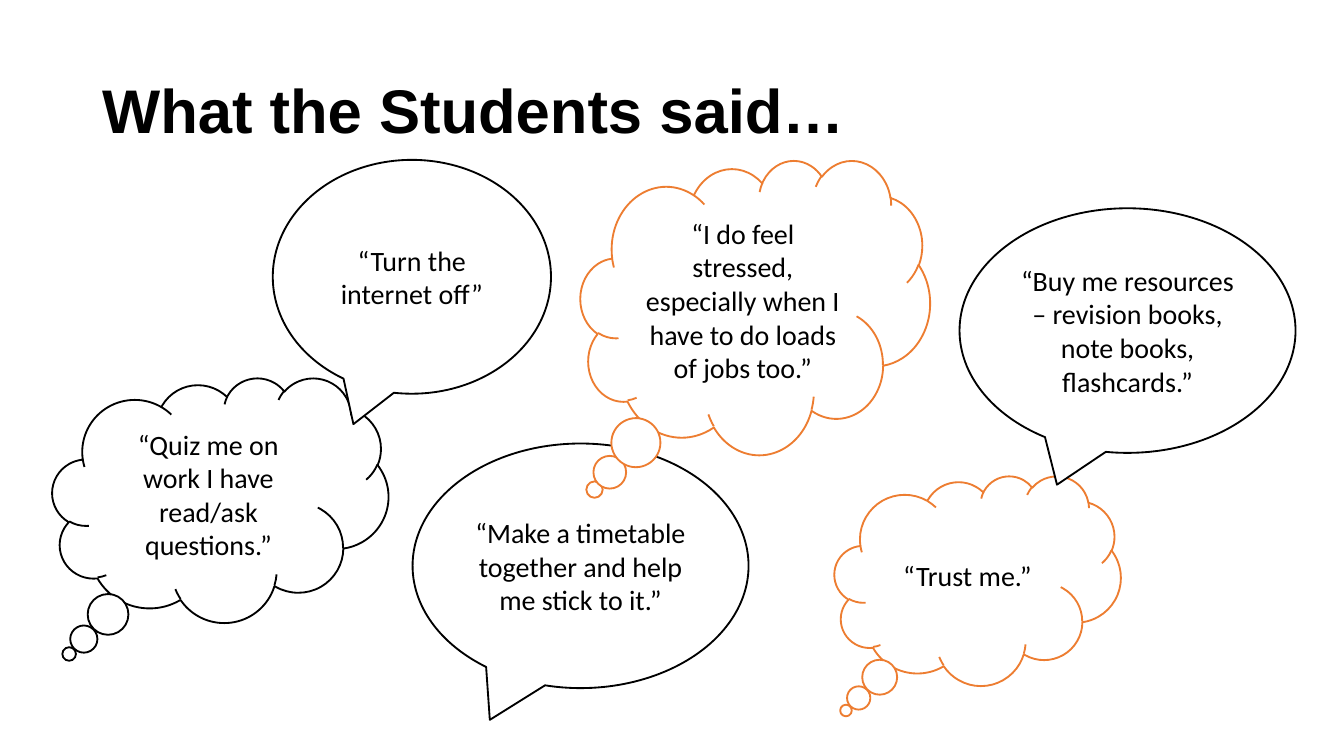
import pptx
import pptx.dml.color
import pptx.enum.shapes
import pptx.enum.text
import pptx.util
from pptx.util import Inches

BLACK = pptx.dml.color.RGBColor(0x00, 0x00, 0x00)
WHITE = pptx.dml.color.RGBColor(0xFF, 0xFF, 0xFF)
ORANGE = pptx.dml.color.RGBColor(0xED, 0x7D, 0x31)

CLOUD = pptx.enum.shapes.MSO_SHAPE.CLOUD_CALLOUT
SPEECH = pptx.enum.shapes.MSO_SHAPE.OVAL_CALLOUT


def write_text(shape, text, font_name, size):
    """Fill the shape with one vertically centred paragraph and return it."""
    frame = shape.text_frame
    frame.word_wrap = True
    frame.vertical_anchor = pptx.enum.text.MSO_ANCHOR.MIDDLE
    frame.margin_left = frame.margin_right = Inches(0.07)
    frame.margin_top = frame.margin_bottom = Inches(0.04)
    paragraph = frame.paragraphs[0]
    paragraph.text = text
    paragraph.font.name = font_name
    paragraph.font.size = pptx.util.Pt(size)
    paragraph.font.color.rgb = BLACK
    return paragraph


presentation = pptx.Presentation()
presentation.slide_width = Inches(10)
presentation.slide_height = Inches(10 * 9 / 16)
slide = presentation.slides.add_slide(presentation.slide_layouts[6])

title = slide.shapes.add_textbox(Inches(0.69), Inches(0.3), Inches(8.62), Inches(1.09))
title_paragraph = write_text(title, "What the Students said…", "Arial", 33)
title_paragraph.font.bold = True
title_paragraph.line_spacing = 0.9

# Back to front: kind, left, top, width, height, tail offset, line colour, quote
bubbles = [
    (CLOUD, 0.39, 2.81, 2.5, 1.82, (-0.45, 0.63), BLACK,
     "“Quiz me on work I have read/ask questions.”"),
    (SPEECH, 3.07, 3.3, 2.5, 1.82, (-0.27, 0.63), BLACK,
     "“Make a timetable together and help me stick to it.”"),
    (SPEECH, 2.03, 1.19, 2.07, 1.74, (-0.21, 0.63), BLACK,
     "“Turn the internet off”"),
    (CLOUD, 6.21, 3.54, 2.13, 1.56, (-0.46, 0.62), ORANGE,
     "“Trust me.”"),
    (SPEECH, 7.14, 1.55, 2.5, 1.82, (-0.21, 0.63), BLACK,
     "“Buy me resources – revision books, note books, flashcards.”"),
    (CLOUD, 4.32, 1.19, 2.6, 2.19, (-0.46, 0.62), ORANGE,
     "“I do feel stressed, especially when I have to do loads of jobs too.”"),
]

for kind, left, top, width, height, tail, line_colour, quote in bubbles:
    bubble = slide.shapes.add_shape(
        kind, Inches(left), Inches(top), Inches(width), Inches(height))
    bubble.shadow.inherit = False
    bubble.adjustments[0], bubble.adjustments[1] = tail
    bubble.fill.solid()
    bubble.fill.fore_color.rgb = WHITE
    bubble.line.color.rgb = line_colour
    bubble.line.width = pptx.util.Pt(1)
    paragraph = write_text(bubble, quote, "Calibri", 15)
    paragraph.alignment = pptx.enum.text.PP_ALIGN.CENTER

presentation.save("out.pptx")
